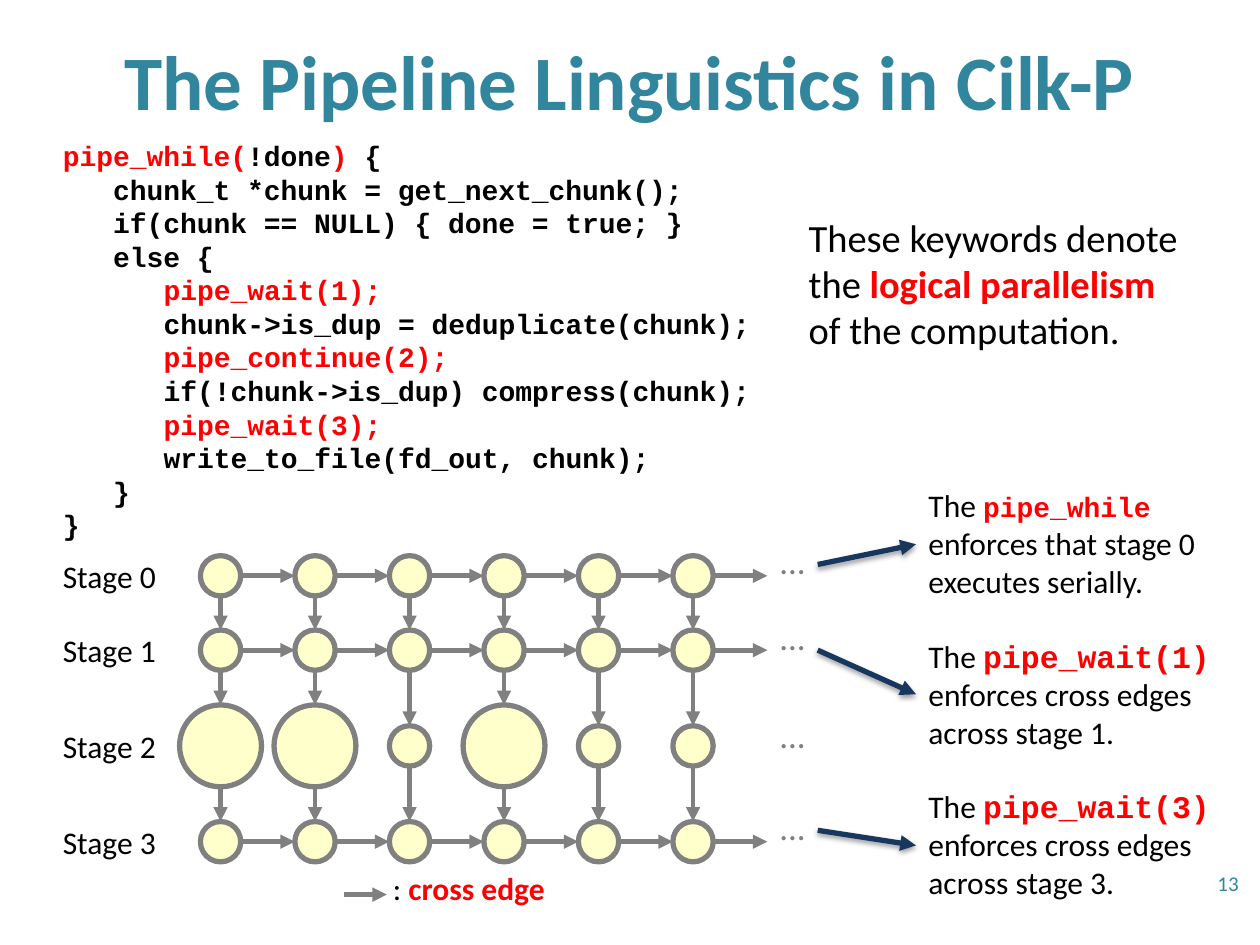
from dataclasses import dataclass

from lxml.etree import SubElement
from pptx import Presentation
from pptx.dml.color import RGBColor
from pptx.enum.shapes import MSO_CONNECTOR, MSO_SHAPE
from pptx.enum.text import MSO_ANCHOR, MSO_AUTO_SIZE, PP_ALIGN
from pptx.oxml.ns import qn
from pptx.util import Inches, Pt


@dataclass(frozen=True)
class Theme:
    body_font: str = "Calibri"
    code_font: str = "Courier New"
    black: str = "000000"
    teal: str = "31859C"
    red: str = "FF0000"
    gray: str = "808080"
    navy: str = "17375E"
    cream: str = "FFFFCC"
    title_size: int = 44
    statement_size: int = 22
    dots_size: int = 20
    text_size: int = 18
    code_size: int = 16
    number_size: int = 12
    edge_width: float = 2.75
    outline_width: float = 3


THEME = Theme()

TITLE = "The Pipeline Linguistics in Cilk-P"
SLIDE_NUMBER = "13"

# Text runs are (text, style); styles are "plain", "key" (red bold) and "code" (red bold code).
STATEMENT = [("These keywords denote the ", "plain"), ("logical parallelism", "key"),
             (" of the computation.", "plain")]
LEGEND = [(": ", "plain"), ("cross edge", "key")]

# Code lines: indent level, then (text, is keyword) pieces
CODE = [
    (0, [("pipe_while(", True), ("!done", False), (") ", True), ("{", False)]),
    (1, [("chunk_t *chunk = get_next_chunk();", False)]),
    (1, [("if(chunk == NULL) { done = true; }", False)]),
    (1, [("else {", False)]),
    (2, [("pipe_wait(1);", True)]),
    (2, [("chunk->is_dup = deduplicate(chunk);", False)]),
    (2, [("pipe_continue(2);", True)]),
    (2, [("if(!chunk->is_dup) compress(chunk);", False)]),
    (2, [("pipe_wait(3);", True)]),
    (2, [("write_to_file(fd_out, chunk);", False)]),
    (1, [("}", False)]),
    (0, [("}", False)]),
]
CODE_INDENT = 0.4

# Stage: label, row center, top of its dots, has cross edges
STAGES = [
    ("Stage 0", 4.57, 4.28, True),
    ("Stage 1", 5.16, 4.88, True),
    ("Stage 2", 5.92, 5.66, False),
    ("Stage 3", 6.68, 6.39, True),
]
ITERATIONS = 6
FIRST_CENTER, PITCH = 1.75, 0.75
RADIUS, LARGE_RADIUS = 0.16, 0.325
LARGE_NODES = {(2, 0), (2, 1), (2, 3)}  # (stage, iteration)

# Callout: keyword, its size, explanation, top, width, arrow start height, arrow end height
CALLOUTS = [
    ("pipe_while", THEME.code_size, " enforces that stage 0 executes serially.",
     3.81, 2.38, 4.48, 4.32),
    ("pipe_wait(1)", THEME.text_size, " enforces cross edges across stage 1.",
     5.01, 2.47, 5.16, 5.51),
    ("pipe_wait(3)", THEME.text_size, " enforces cross edges across stage 3.",
     6.2, 2.47, 6.59, 6.71),
]
LEFT_MARGIN, CALLOUT_LEFT, CALLOUT_ARROW_LEFT = 0.4, 7.27, 6.49


def set_font(font, size, color, name=THEME.body_font, bold=False):
    font.name, font.size, font.bold = name, Pt(size), bold
    font.color.rgb = RGBColor.from_string(color)


def add_text_box(slide, left, top, width, height):
    box = slide.shapes.add_textbox(*map(Inches, (left, top, width, height)))
    box.text_frame.word_wrap = True
    box.text_frame.auto_size = MSO_AUTO_SIZE.SHAPE_TO_FIT_TEXT
    return box.text_frame


def add_label(slide, place, text, size, color, alignment=PP_ALIGN.LEFT):
    frame = add_text_box(slide, *place)
    paragraph = frame.paragraphs[0]
    paragraph.text, paragraph.alignment = text, alignment
    set_font(paragraph.font, size, color)
    return frame


def add_rich_text(slide, place, runs, size, code_size=THEME.code_size):
    paragraph = add_text_box(slide, *place).paragraphs[0]
    styles = {
        "plain": (size, THEME.black),
        "key": (size, THEME.red, THEME.body_font, True),
        "code": (code_size, THEME.red, THEME.code_font, True),
    }
    for text, style in runs:
        run = paragraph.add_run()
        run.text = text
        set_font(run.font, *styles[style])


def add_arrow(slide, start, end, color=THEME.gray, width=THEME.edge_width, shadow=False):
    arrow = slide.shapes.add_connector(MSO_CONNECTOR.STRAIGHT, *map(Inches, (*start, *end)))
    arrow.line.color.rgb = RGBColor.from_string(color)
    arrow.line.width = Pt(width)
    SubElement(arrow.line._get_or_add_ln(), qn("a:tailEnd"), type="triangle")
    effects = SubElement(arrow._element.spPr, qn("a:effectLst"))
    if shadow:
        outer = SubElement(effects, qn("a:outerShdw"), blurRad=str(Pt(3.1)),
                           dist=str(Pt(1.6)), dir="5400000", rotWithShape="0")
        shade = SubElement(outer, qn("a:srgbClr"), val=THEME.black)
        SubElement(shade, qn("a:alpha"), val="38000")


def add_node(slide, x, y, radius):
    node = slide.shapes.add_shape(
        MSO_SHAPE.OVAL, *map(Inches, (x - radius, y - radius, 2 * radius, 2 * radius)))
    node.shadow.inherit = False
    node.fill.solid()
    node.fill.fore_color.rgb = RGBColor.from_string(THEME.cream)
    node.line.color.rgb = RGBColor.from_string(THEME.gray)
    node.line.width = Pt(THEME.outline_width)


def add_title(slide):
    title = slide.shapes.title
    title.left, title.top, title.width, title.height = map(Inches, (0.5, 0.01, 9, 1.25))
    title.text_frame.vertical_anchor = MSO_ANCHOR.MIDDLE
    paragraph = title.text_frame.paragraphs[0]
    paragraph.text, paragraph.alignment = TITLE, PP_ALIGN.CENTER
    set_font(paragraph.font, THEME.title_size, THEME.teal, bold=True)


def add_code(slide):
    frame = add_text_box(slide, LEFT_MARGIN, 1.05, 5.89, 3.33)
    for number, (level, pieces) in enumerate(CODE):
        paragraph = frame.add_paragraph() if number else frame.paragraphs[0]
        paragraph._p.get_or_add_pPr().set("marL", str(Inches(level * CODE_INDENT)))
        set_font(paragraph.font, THEME.code_size, THEME.black, THEME.code_font, True)
        for text, is_keyword in pieces:
            run = paragraph.add_run()
            run.text = text
            color = THEME.red if is_keyword else THEME.black
            set_font(run.font, THEME.code_size, color, THEME.code_font, True)


def add_pipeline(slide):
    def radius(stage, iteration):
        return LARGE_RADIUS if (stage, iteration) in LARGE_NODES else RADIUS

    for stage, (label, y, dots_top, has_cross_edges) in enumerate(STAGES):
        add_label(slide, (LEFT_MARGIN, y - 0.2, 1.03, 0.4), label, THEME.text_size, THEME.black)
        dots = add_label(slide, (6.08, dots_top, 0.42, 0.39), "...", THEME.dots_size,
                         THEME.gray, PP_ALIGN.CENTER)
        dots.margin_top, dots.vertical_anchor = 0, MSO_ANCHOR.MIDDLE
        for iteration in range(ITERATIONS):
            x = FIRST_CENTER + iteration * PITCH
            if has_cross_edges:
                add_arrow(slide, (x + RADIUS, y), (x + PITCH - RADIUS, y))
            if stage:
                above = STAGES[stage - 1][1] + radius(stage - 1, iteration)
                add_arrow(slide, (x, above), (x, y - radius(stage, iteration)))
            add_node(slide, x, y, radius(stage, iteration))


def add_callouts(slide):
    for keyword, size, explanation, top, width, start, end in CALLOUTS:
        runs = [("The ", "plain"), (keyword, "code"), (explanation, "plain")]
        add_rich_text(slide, (CALLOUT_LEFT, top, width, 1.01), runs, THEME.text_size, size)
        add_arrow(slide, (CALLOUT_ARROW_LEFT, start), (CALLOUT_LEFT, end),
                  THEME.navy, THEME.outline_width, shadow=True)


def main():
    presentation = Presentation()
    presentation.slide_width, presentation.slide_height = Inches(10), Inches(7.5)
    slide = presentation.slides.add_slide(presentation.slide_layouts[5])
    add_title(slide)
    add_code(slide)
    add_pipeline(slide)
    add_arrow(slide, (2.73, 7.1), (3.07, 7.1))
    add_rich_text(slide, (3.02, 6.85, 1.56, 0.4), LEGEND, THEME.text_size)
    add_rich_text(slide, (6.32, 1.65, 3.21, 1.21), STATEMENT, THEME.statement_size)
    add_callouts(slide)
    number = add_label(slide, (7.6, 6.81, 2.33, 0.4), SLIDE_NUMBER, THEME.number_size,
                       THEME.teal, PP_ALIGN.RIGHT)
    number.auto_size, number.vertical_anchor = MSO_AUTO_SIZE.NONE, MSO_ANCHOR.MIDDLE
    presentation.save("out.pptx")


if __name__ == "__main__":
    main()
